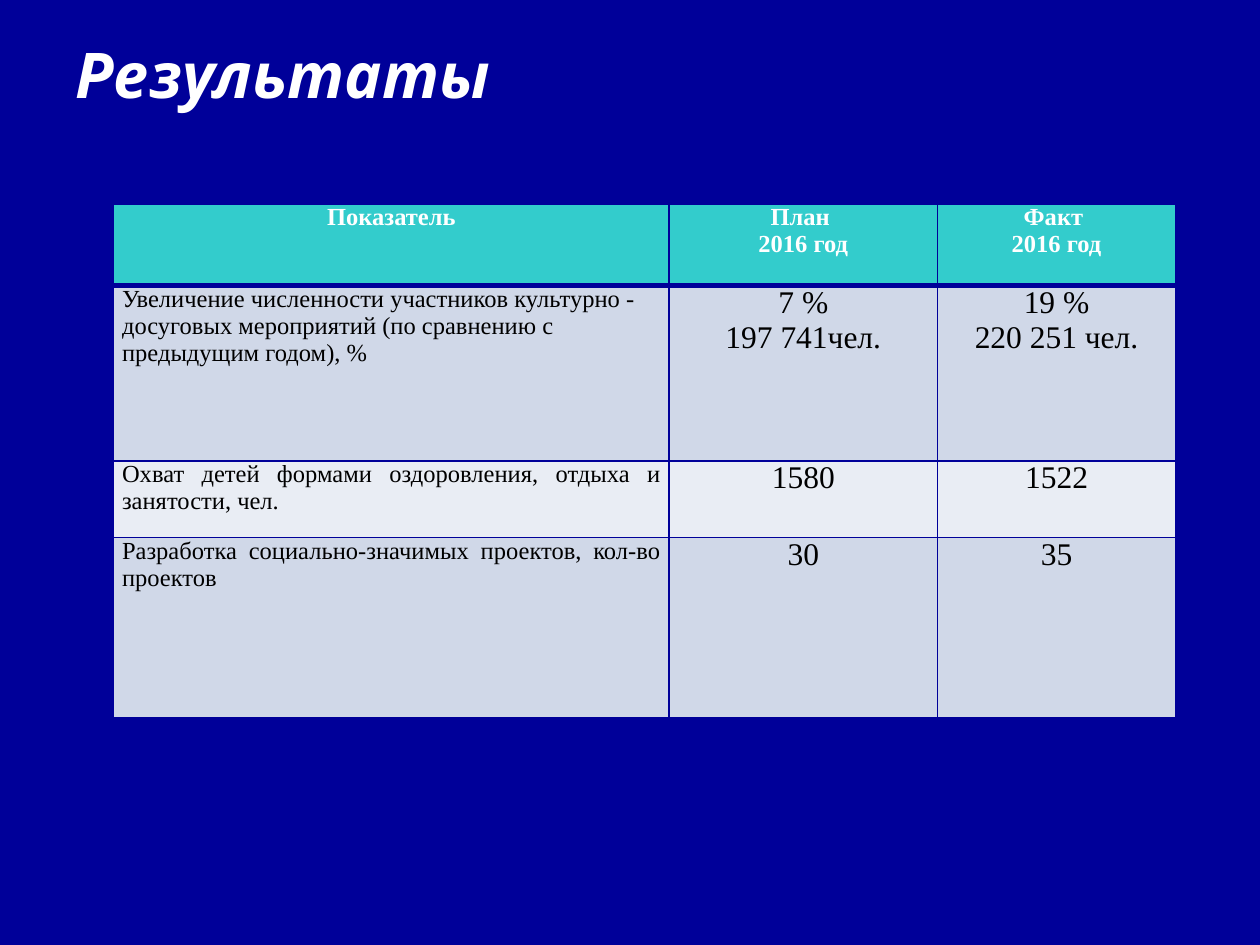
from lxml.etree import SubElement
from pptx import Presentation
from pptx.dml.color import RGBColor
from pptx.enum.text import MSO_ANCHOR, PP_ALIGN
from pptx.oxml.ns import qn
from pptx.util import Cm, Pt

COLOURS = {
    "navy": "000099",
    "teal": "33CCCC",
    "band": "D0D8E8",
    "light": "E9EDF4",
    "white": "FFFFFF",
    "black": "000000",
}
HEADINGS = [["Показатель"], ["План ", "2016 год"], ["Факт ", "2016 год"]]
RESULTS = [
    (["Увеличение численности участников культурно - досуговых мероприятий "
      "(по сравнению с предыдущим годом), %"],
     ["7 %", "197 741чел."], ["19 %", "220 251 чел."]),
    (["Охват детей формами оздоровления, отдыха и занятости, чел."], ["1580"], ["1522"]),
    (["Разработка социально-значимых проектов, кол-во проектов"], ["30"], ["35"]),
]
COLUMN_WIDTHS = [11.2, 5.41, 4.8]
ROW_HEIGHTS = [1.65, 3.53, 1.55, 3.63]


class SlideBuilder:
    """Holds the style and the current slide, and adds its elements."""

    title_font = "Karla"
    table_font = "Times New Roman"

    def __init__(self, deck):
        self.page = deck.slides.add_slide(deck.slide_layouts[5])
        background = self.page.background.fill
        background.solid()
        background.fore_color.rgb = self.colour("navy")

    def colour(self, name):
        return RGBColor.from_string(COLOURS[name])

    def add_span(self, para, text, font, size, colour, bold=False, italic=False):
        span = para.add_run()
        span.text = text
        span.font.name = font
        span.font.size = Pt(size)
        span.font.bold = bold
        span.font.italic = italic
        span.font.color.rgb = self.colour(colour)

    def add_title(self, text, left, top, width, height):
        box = self.page.shapes.title
        box.left, box.top, box.width, box.height = map(Cm, (left, top, width, height))
        box.text_frame.vertical_anchor = MSO_ANCHOR.MIDDLE
        para = box.text_frame.paragraphs[0]
        para.alignment = PP_ALIGN.LEFT
        self.add_span(para, text, self.title_font, 36, "white", bold=True, italic=True)

    def add_borders(self, cell, top, bottom):
        properties = cell._tc.get_or_add_tcPr()
        for side, width in (("L", 1), ("R", 1), ("T", top), ("B", bottom)):
            line = SubElement(properties, qn(f"a:ln{side}"), w=str(Pt(width)))
            fill = SubElement(line, qn("a:solidFill"))
            SubElement(fill, qn("a:srgbClr"), val=COLOURS["navy"])

    def fill_cell(self, cell, lines, fill, size, colour, alignment, bold):
        cell.margin_left = cell.margin_right = Cm(0.17)
        cell.margin_top = cell.margin_bottom = 0
        cell.fill.solid()
        cell.fill.fore_color.rgb = self.colour(fill)
        frame = cell.text_frame
        for index, text in enumerate(lines):
            para = frame.add_paragraph() if index else frame.paragraphs[0]
            para.alignment = alignment
            self.add_span(para, text, self.table_font, size, colour, bold)

    def add_results_table(self, left, top):
        rows = [HEADINGS, *RESULTS]
        table = self.page.shapes.add_table(
            len(rows), len(HEADINGS), Cm(left), Cm(top),
            Cm(sum(COLUMN_WIDTHS)), Cm(sum(ROW_HEIGHTS))).table
        for column, width in zip(table.columns, COLUMN_WIDTHS):
            column.width = Cm(width)
        for row, height in zip(table.rows, ROW_HEIGHTS):
            row.height = Cm(height)
        for r, row in enumerate(rows):
            header = r == 0
            fill = "teal" if header else ("light", "band")[r % 2]
            for c, lines in enumerate(row):
                cell = table.cell(r, c)
                label = c == 0 and not header
                alignment = PP_ALIGN.CENTER
                if label:
                    alignment = PP_ALIGN.LEFT if r == 1 else PP_ALIGN.JUSTIFY
                self.add_borders(cell, top=3 if r == 1 else 1, bottom=3 if header else 1)
                self.fill_cell(cell, lines, fill, 14 if header or label else 18,
                               "white" if header else "black", alignment, header)


def main():
    deck = Presentation()
    deck.slide_width, deck.slide_height = Cm(25.4), Cm(19.05)
    builder = SlideBuilder(deck)
    builder.add_title("Результаты", 1.27, 0.43, 22.86, 2.11)
    builder.add_results_table(2.29, 4.11)
    deck.save("out.pptx")


if __name__ == "__main__":
    main()
